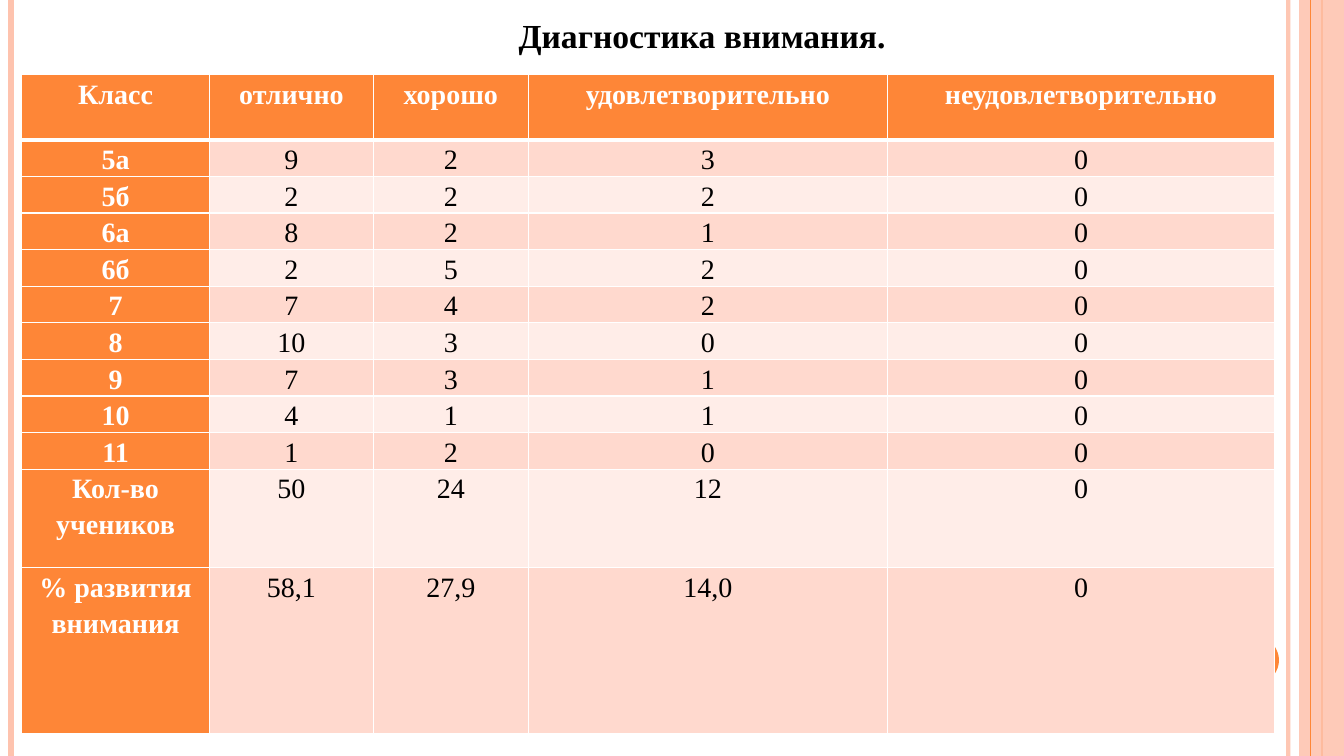
from lxml import etree
from pptx import Presentation
from pptx import util as u
from pptx.dml.color import RGBColor
from pptx.enum import shapes, text
from pptx.oxml.ns import qn

Pt = u.Pt
FONT = "Times New Roman"
ORANGE, PEACH, WHITE, BLACK = "FE8637", "FEC3AE", "FFFFFF", "000000"
BANDS = ("FFD9CE", "FFEDE8")

COLUMN_WIDTHS = (134.3, 117, 110.8, 256.5, 276.5)
ROW_HEIGHTS = (46.5, *[26.15] * 9, 70.4, 118.4)
ROWS = (
    ("Класс", "отлично", "хорошо", "удовлетворительно", "неудовлетворительно"),
    ("5а", "9", "2", "3", "0"),
    ("5б", "2", "2", "2", "0"),
    ("6а", "8", "2", "1", "0"),
    ("6б", "2", "5", "2", "0"),
    ("7", "7", "4", "2", "0"),
    ("8", "10", "3", "0", "0"),
    ("9", "7", "3", "1", "0"),
    ("10", "4", "1", "1", "0"),
    ("11", "1", "2", "0", "0"),
    ("Кол-во учеников", "50", "24", "12", "0"),
    ("% развития внимания", "58,1", "27,9", "14,0", "0"),
)


def paint(color_format, color, opacity=100):
    """Fill a solid fill or line fill with a hex colour."""
    color_format.solid()
    color_format.fore_color.rgb = RGBColor.from_string(color)
    if opacity < 100:
        element = color_format.fore_color._xFill.find(qn("a:srgbClr"))
        etree.SubElement(element, qn("a:alpha"), val=str(opacity * 1000))


def write(frame, content, size=20, color=BLACK, bold=False, spacing=None):
    paragraph = frame.paragraphs[0]
    paragraph.alignment = text.PP_ALIGN.CENTER
    if spacing:
        paragraph.line_spacing = spacing
    run = paragraph.add_run()
    run.text = content
    run.font.name, run.font.size, run.font.bold = FONT, Pt(size), bold
    paint(run.font.fill, color)


def add_vertical_line(slide, x, top, height, color, width, opacity=100):
    line = slide.shapes.add_connector(
        shapes.MSO_CONNECTOR.STRAIGHT, Pt(x), Pt(top), Pt(x), Pt(top + height))
    line.line.width = Pt(width)
    paint(line.line.fill, color, opacity)
    etree.SubElement(line._element.spPr, qn("a:effectLst"))


def add_plain_shape(slide, kind, left, top, width, height, color, opacity=100):
    shape = slide.shapes.add_shape(kind, Pt(left), Pt(top), Pt(width), Pt(height))
    shape.shadow.inherit = False
    shape.line.fill.background()
    paint(shape.fill, color, opacity)


def add_borders(cell, **widths):
    """Draw white borders; keyword names are the sides L, R, T and B."""
    properties = cell._tc.get_or_add_tcPr()
    for side, width in widths.items():
        border = etree.SubElement(properties, qn(f"a:ln{side}"), w=str(Pt(width)))
        fill = etree.SubElement(border, qn("a:solidFill"))
        etree.SubElement(fill, qn("a:srgbClr"), val=WHITE)


def add_decoration(slide, left, top, width, height):
    right = left + width
    # Stripes along both edges
    add_vertical_line(slide, right - 39.8, top, height, PEACH, 3, 93)
    add_vertical_line(slide, left + 7.9, top, height, PEACH, 4.5)
    add_vertical_line(slide, right - 16, top, height, ORANGE, 1.5)
    add_plain_shape(slide, shapes.MSO_SHAPE.RECTANGLE,
                    right - 32, top, 32, height, PEACH, 87)
    add_vertical_line(slide, right - 24, top, height, ORANGE, 0.75)
    # Disc partly covered by the table
    add_plain_shape(slide, shapes.MSO_SHAPE.OVAL,
                    right - 104, top + 450, 57.6, 43.2, ORANGE)


def add_results_table(slide, left, top):
    table = slide.shapes.add_table(
        len(ROWS), len(COLUMN_WIDTHS), Pt(left), Pt(top),
        Pt(sum(COLUMN_WIDTHS)), Pt(sum(ROW_HEIGHTS))).table
    for column, width in zip(table.columns, COLUMN_WIDTHS):
        column.width = Pt(width)
    for row, height in zip(table.rows, ROW_HEIGHTS):
        row.height = Pt(height)
    for i, values in enumerate(ROWS):
        for j, value in enumerate(values):
            cell = table.cell(i, j)
            heading = i == 0 or j == 0
            cell.margin_left = cell.margin_right = Pt(5)
            cell.margin_top = cell.margin_bottom = 0
            add_borders(cell, L=1, R=1, T=3 if i == 1 else 1, B=3 if i == 0 else 1)
            paint(cell.fill, ORANGE if heading else BANDS[(i - 1) % 2])
            write(cell.text_frame, value, color=WHITE if heading else BLACK,
                  bold=heading, spacing=1.15)


def add_title(slide, left, top, width, height):
    box = slide.shapes.add_textbox(Pt(left), Pt(top), Pt(width), Pt(height))
    box.text_frame.word_wrap = True
    box.text_frame.vertical_anchor = text.MSO_ANCHOR.MIDDLE
    write(box.text_frame, "Диагностика внимания.", size=24, bold=True)


def main():
    presentation = Presentation()
    presentation.slide_width, presentation.slide_height = Pt(960), Pt(540)
    slide = presentation.slides.add_slide(presentation.slide_layouts[6])
    add_decoration(slide, 0, 0, 960, 540)
    add_results_table(slide, 15.4, 53.4)
    add_title(slide, 124.6, 7.2, 753.8, 36)
    presentation.save("out.pptx")


if __name__ == "__main__":
    main()
